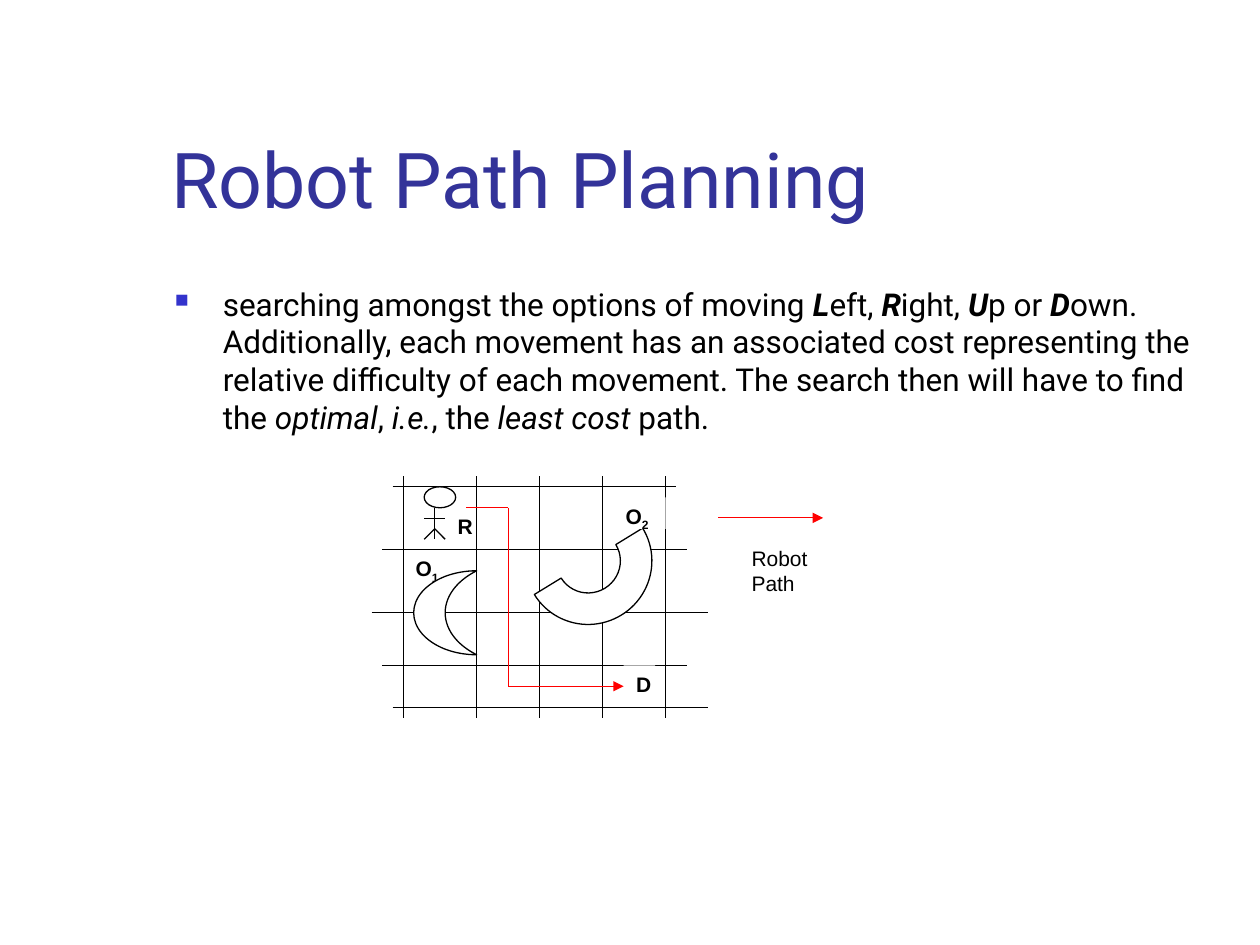
import itertools

import lxml.etree
import pptx
import pptx.dml.color
import pptx.enum.shapes
import pptx.enum.text
import pptx.oxml.ns
import pptx.util

SHAPE = pptx.enum.shapes.MSO_SHAPE
ANCHOR = pptx.enum.text.MSO_ANCHOR
UNIT = 1 / 12


def rgb(value):
    """Turn a hex string into a colour."""
    return pptx.dml.color.RGBColor.from_string(value)


def sub(parent, tag, **attrs):
    """Append a DrawingML element with attributes."""
    return lxml.etree.SubElement(parent, pptx.oxml.ns.qn(tag), attrs)


def cells(box, *values):
    """Convert left, top and optional size in grid cells to lengths."""
    offsets = (box[0], box[1], 0, 0)
    return [pptx.util.Inches(o + v * UNIT) for o, v in zip(offsets, values)]


def add_run(p, text, size=12, font="Arial", color="000000", bold=False, italic=False, baseline=0):
    """Add a formatted run to a paragraph."""
    r = p.add_run()
    r.text = text
    r.font.size = pptx.util.Pt(size)
    r.font.name = font
    r.font.color.rgb = rgb(color)
    r.font.bold = bold
    r.font.italic = italic
    if baseline:
        r.font._element.set("baseline", str(baseline * 1000))


def add_text_box(s, lengths, anchor=ANCHOR.TOP, fill=None):
    """Add a wrapping text box and return its first paragraph."""
    sp = s.shapes.add_textbox(*lengths)
    if fill:
        sp.fill.solid()
        sp.fill.fore_color.rgb = rgb(fill)
    tf = sp.text_frame
    tf.word_wrap = True
    tf.vertical_anchor = anchor
    return tf.paragraphs[0]


def add_label(s, box, place, text, subscript="", bold=True):
    """Add a white label on the grid, with an optional subscript."""
    p = add_text_box(s, cells(box, *place), fill="FFFFFF")
    add_run(p, text, bold=bold)
    if subscript:
        add_run(p, subscript, bold=bold, baseline=-25)


def add_line(s, box, start, end, color="000000", arrow=False):
    """Draw a straight line between two grid points."""
    kind = pptx.enum.shapes.MSO_CONNECTOR.STRAIGHT
    c = s.shapes.add_connector(kind, *cells(box, *start), *cells(box, *end))
    c.line.color.rgb = rgb(color)
    c.line.width = pptx.util.Pt(0.75)
    if arrow:
        sub(c.line._get_or_add_ln(), "a:tailEnd", type="triangle")
    sub(c._element.spPr, "a:effectLst")


def add_outline(s, box, kind, place):
    """Draw a white preset shape with a thin black outline."""
    sp = s.shapes.add_shape(kind, *cells(box, *place))
    sp.shadow.inherit = False
    sp.fill.solid()
    sp.fill.fore_color.rgb = rgb("FFFFFF")
    sp.line.color.rgb = rgb("000000")
    sp.line.width = pptx.util.Pt(0.75)
    return sp


def add_title(s, box):
    """Place the slide title at the bottom of its box."""
    p = add_text_box(s, [pptx.util.Inches(v) for v in box], ANCHOR.BOTTOM)
    add_run(p, "Robot Path Planning", size=44, font="Roboto", color="333399")


def add_body(s, box):
    """Place the bulleted paragraph with its emphasised words."""
    p = add_text_box(s, [pptx.util.Inches(v) for v in box])
    indent = pptx.util.Inches(0.38)
    pPr = p._p.get_or_add_pPr()
    pPr.set("marL", str(indent))
    pPr.set("indent", str(-indent))
    sub(sub(pPr, "a:buClr"), "a:srgbClr", val="3333CC")
    sub(pPr, "a:buSzPct", val="60000")
    sub(pPr, "a:buChar", char="■")
    plain, key, stress = {}, {"bold": True, "italic": True}, {"italic": True}
    for text, style in (
        ("searching amongst the options of moving ", plain),
        ("L", key), ("eft, ", plain), ("R", key), ("ight, ", plain),
        ("U", key), ("p or ", plain), ("D", key),
        ("own. Additionally, each movement has an associated cost representing "
         "the relative difficulty of each movement. The search then will have "
         "to find the ", plain),
        ("optimal", stress), (", ", plain), ("i.e.", stress), (", the ", plain),
        ("least cost ", stress), ("path.", plain),
    ):
        add_run(p, text, size=18, font="Roboto", **style)


def add_grid(s, box):
    """Draw the floor grid the robot moves on."""
    for x in (3, 10, 16, 22, 28):
        add_line(s, box, (x, 0), (x, 23))
    for y, left, right in ((1, 2, 29), (7, 1, 30), (13, 0, 32), (18, 1, 30), (22, 2, 32)):
        add_line(s, box, (left, y), (right, y))


def add_robot(s, box):
    """Draw the robot as a stick figure."""
    add_outline(s, box, SHAPE.OVAL, (5, 1, 3, 2))
    add_line(s, box, (6, 3), (6, 6))
    for x in (5, 7):
        add_line(s, box, (6, 4), (x, 4))
        add_line(s, box, (6, 5), (x, 6))


def add_map(s, box):
    """Draw the grid, robot, obstacles, destination and route."""
    add_label(s, box, (3, 7, 5, 3), "O", "1")
    add_label(s, box, (7, 3, 4, 3), "R")
    add_grid(s, box)
    add_robot(s, box)
    arc = add_outline(s, box, SHAPE.BLOCK_ARC, (14.6, 2.1, 12.1, 12))
    arc.rotation = 148.5
    add_outline(s, box, SHAPE.MOON, (4, 9, 6, 8))
    add_label(s, box, (24, 18, 3, 3), "D")
    add_label(s, box, (23, 2, 5, 3), "O", "2")
    route = [(9, 3), (13, 3), (13, 20), (24, 20)]
    for start, end in itertools.pairwise(route):
        add_line(s, box, start, end, color="FF0000", arrow=end == route[-1])


def add_legend(s, box):
    """Explain the red arrow beside the map."""
    add_line(s, box, (0, 0), (10, 0), color="FF0000", arrow=True)
    add_label(s, box, (2, 2, 12, 4), "Robot Path", bold=False)


def main():
    """Build the slide and save it."""
    prs = pptx.Presentation()
    prs.slide_width = pptx.util.Inches(10)
    prs.slide_height = pptx.util.Inches(7.5)
    s = prs.slides.add_slide(prs.slide_layouts[6])
    add_title(s, (1.26, 0.23, 8.52, 1.6))
    add_body(s, (1.29, 2.21, 8.5, 4.5))
    add_map(s, (2.95, 3.78))
    add_legend(s, (5.7, 4.11))
    prs.save("out.pptx")


if __name__ == "__main__":
    main()
